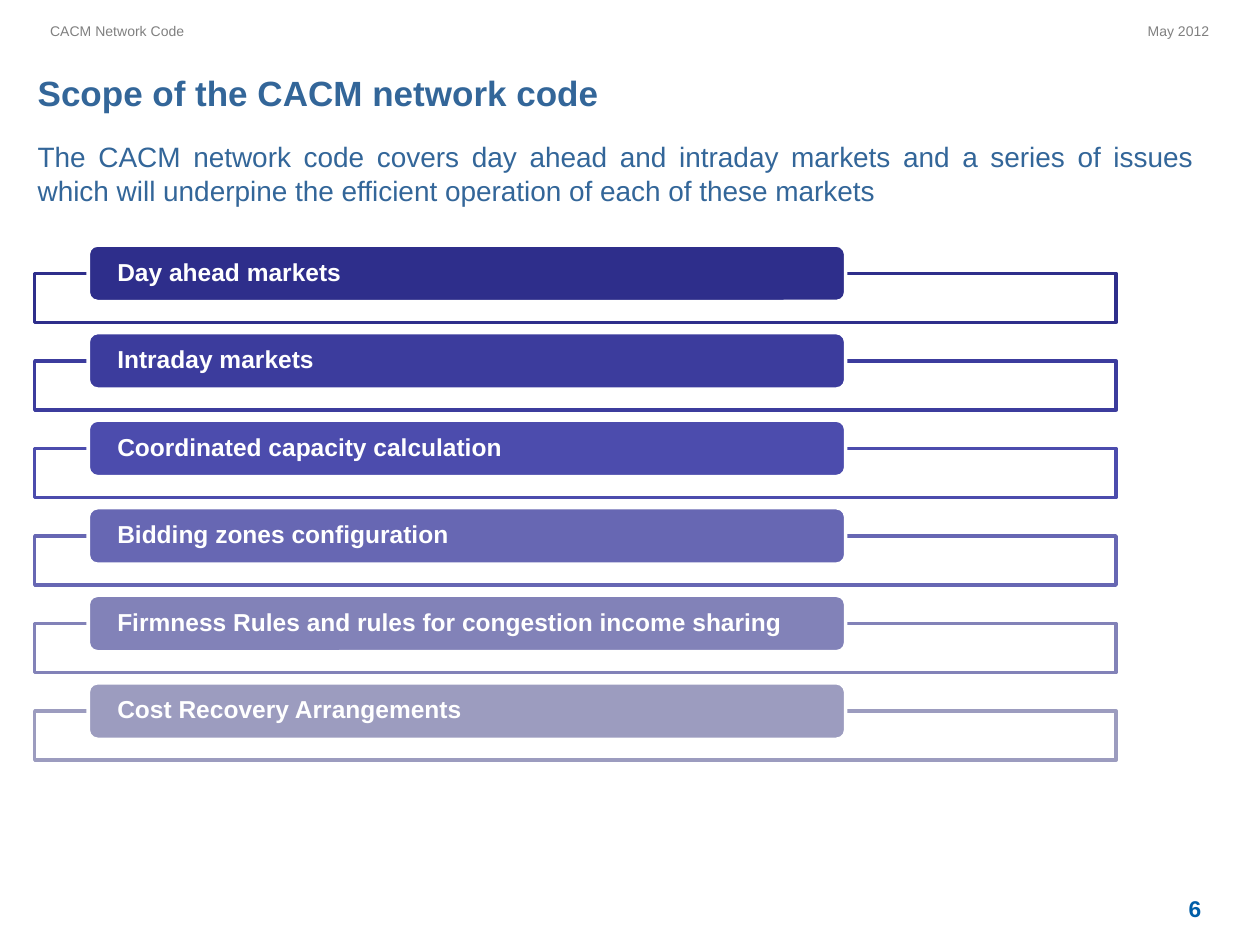
from lxml.etree import SubElement
from pptx import Presentation
from pptx.dml.color import RGBColor
from pptx.enum.shapes import MSO_SHAPE as Shape
from pptx.enum.text import MSO_ANCHOR as Anchor, PP_ALIGN as Align
from pptx.oxml.ns import qn
from pptx.util import Cm, Pt


def color(hex_text):
    return RGBColor.from_string(hex_text)


def write(box, text, size, hex_text, bold=False, align=Align.LEFT, **frame_format):
    """Put one Arial paragraph in the box; frame_format sets text frame attributes."""
    frame = box.text_frame
    frame.word_wrap = True
    for name, value in frame_format.items():
        setattr(frame, name, value)
    para = frame.paragraphs[0]
    para.alignment = align
    span = para.add_run()
    span.text = text
    for name, value in {"name": "Arial", "size": Pt(size), "bold": bold}.items():
        setattr(span.font, name, value)
    span.font.color.rgb = color(hex_text)
    return para


deck = Presentation()
deck.slide_width, deck.slide_height = Cm(25.4), Cm(19.05)
page = deck.slides.add_slide(deck.slide_layouts[6])

# Header, title, introduction and page number
texts = [
    ((14.88, 0.33, 9.75, 0.61), "May 2012", 8, "808080", {"align": Align.RIGHT}),
    ((0.76, 0.33, 9.75, 0.61), "CACM Network Code", 8, "808080", {}),
    ((0.51, 1.32, 24.13, 1.12), "Scope of the CACM network code", 20, "336699",
     {"bold": True}),
    ((0.51, 2.69, 23.8, 1.63),
     "The CACM network code covers day ahead and intraday markets and a series of "
     "issues which will underpine the efficient operation of each of these markets",
     16, "336699", {"align": Align.JUSTIFY}),
    ((23.6, 17.98, 1.3, 0.66), "6", 13, "005EA8",
     {"bold": True, "vertical_anchor": Anchor.MIDDLE,
      "margin_left": Cm(0.36), "margin_right": Cm(0.36)}),
]
for place, text, size, hex_text, text_format in texts:
    box = page.shapes.add_textbox(*map(Cm, place))
    write(box, text, size, hex_text, **text_format)

# Topics: a labelled bar over an outlined frame, repeated at equal steps
topics = [
    ("Day ahead markets", "2E2E8B"),
    ("Intraday markets", "3C3C9D"),
    ("Coordinated capacity calculation", "4C4CAD"),
    ("Bidding zones configuration", "6767B3"),
    ("Firmness Rules and rules for congestion income sharing", "8282B8"),
    ("Cost Recovery Arrangements", "9C9CBF"),
]
first_top, step = 4.94, 1.765
for index, (topic, shade) in enumerate(topics):
    top = first_top + index * step
    outline = page.shapes.add_shape(
        Shape.RECTANGLE, Cm(0.7), Cm(top + 0.57), Cm(21.8), Cm(0.99))
    bar = page.shapes.add_shape(
        Shape.ROUNDED_RECTANGLE, Cm(1.78), Cm(top), Cm(15.27), Cm(1.14))
    for shape, fill, line in ((outline, "FFFFFF", shade), (bar, shade, "FFFFFF")):
        shape.shadow.inherit = False
        shape.fill.solid()
        shape.fill.fore_color.rgb = color(fill)
        shape.line.color.rgb = color(line)
        shape.line.width = Pt(2)
    white = outline.fill._xPr.find(qn("a:solidFill"))[0]
    SubElement(white, qn("a:alpha"), val="90000")
    para = write(bar, topic, 14, "FFFFFF", bold=True, vertical_anchor=Anchor.MIDDLE,
                 margin_left=Cm(0.53), margin_right=Cm(0.53),
                 margin_top=0, margin_bottom=0)
    para.line_spacing = 0.9

deck.save("out.pptx")
